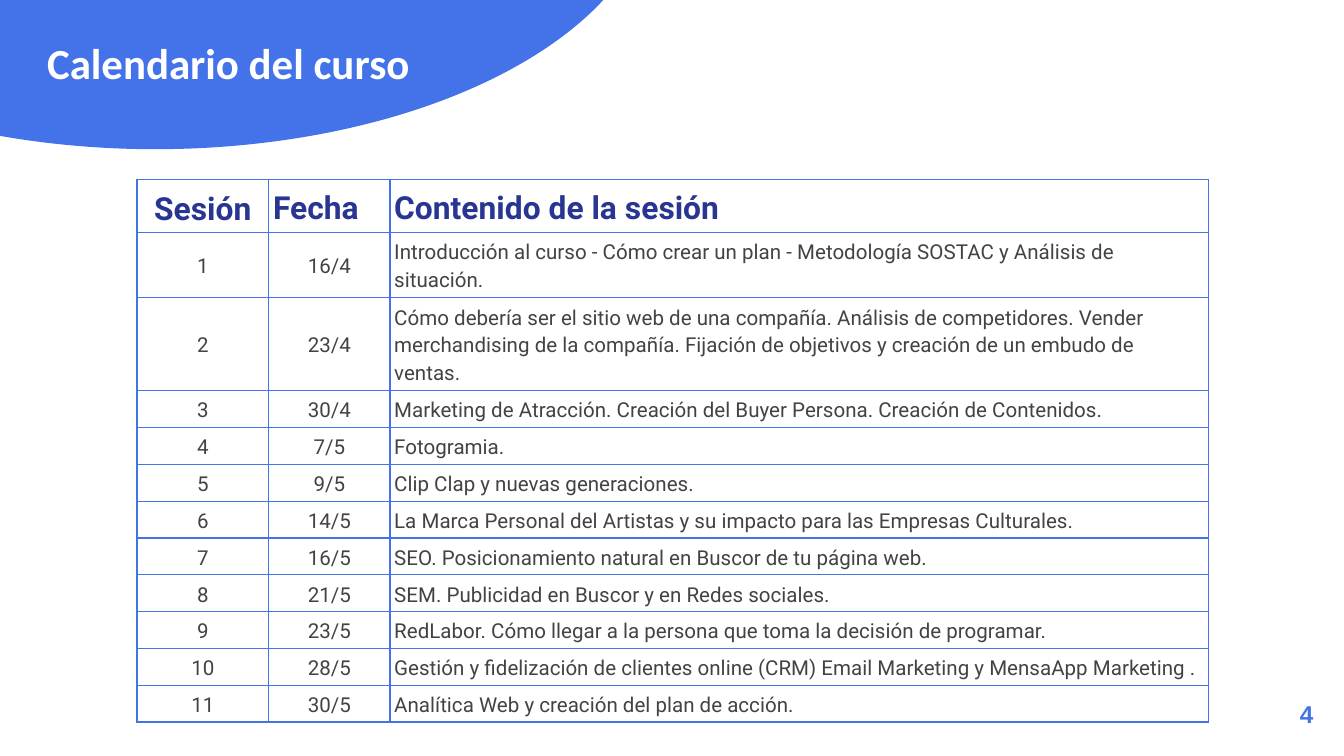
import dataclasses

import pptx
import pptx.dml.color
import pptx.enum.shapes
import pptx.enum.text
import pptx.oxml
import pptx.oxml.ns
import pptx.util

Cm = pptx.util.Cm
Pt = pptx.util.Pt
RGB = pptx.dml.color.RGBColor.from_string
ALIGN = pptx.enum.text.PP_ALIGN
ANCHOR = pptx.enum.text.MSO_ANCHOR


@dataclasses.dataclass(frozen=True)
class Theme:
    blue: str = "4473E9"
    navy: str = "283592"
    grey: str = "434343"
    white: str = "FFFFFF"
    title_size: int = 23
    header_size: int = 17
    body_size: int = 11
    number_size: int = 13
    border_width: float = 0.75


theme = Theme()


def write_text(holder, text, *, font, size, color, bold=False, align=ALIGN.LEFT,
               anchor=ANCHOR.MIDDLE, margin=0.25, spacing=None):
    holder.text = text
    holder.vertical_anchor = anchor
    holder.margin_left = holder.margin_right = Cm(margin)
    holder.margin_top = holder.margin_bottom = Cm(margin)
    paragraph = getattr(holder, "text_frame", holder).paragraphs[0]
    paragraph.alignment = align
    paragraph.line_spacing = spacing
    run_font = paragraph.runs[0].font
    run_font.name = font
    run_font.size = Pt(size)
    run_font.bold = bold
    run_font.color.rgb = RGB(color)


def add_borders(cell, color, width):
    properties = cell._tc.get_or_add_tcPr()
    for side in ("lnL", "lnR", "lnT", "lnB"):
        properties.append(pptx.oxml.parse_xml(
            f'<a:{side} {pptx.oxml.ns.nsdecls("a")} w="{Pt(width)}">'
            f'<a:solidFill><a:srgbClr val="{color}"/></a:solidFill></a:{side}>'
        ))


presentation = pptx.Presentation()
presentation.slide_width = Cm(25.4)
presentation.slide_height = Cm(14.29)
slide = presentation.slides.add_slide(presentation.slide_layouts.get_by_name("Title Only"))

title = slide.shapes.title
title.left, title.top, title.width, title.height = Cm(0.64), Cm(0.33), Cm(8.76), Cm(1.7)
title.text_frame.auto_size = pptx.enum.text.MSO_AUTO_SIZE.NONE
write_text(title.text_frame, "Calendario del curso", font="Calibri",
           size=theme.title_size, color=theme.white, bold=True)

title_backdrop = slide.shapes.add_shape(
    pptx.enum.shapes.MSO_SHAPE.OVAL, Cm(-6.55), Cm(-7.44), Cm(18.97), Cm(10.26))
title_backdrop.shadow.inherit = False
title_backdrop.fill.solid()
title_backdrop.fill.fore_color.rgb = RGB(theme.blue)
title_backdrop.line.fill.background()
title.element.addprevious(title_backdrop.element)

page_number = slide.shapes.add_textbox(Cm(23.55), Cm(12.95), Cm(1.52), Cm(1.09))
page_number.text_frame.word_wrap = True
write_text(page_number.text_frame, "4", font="Arial", size=theme.number_size,
           color=theme.blue, bold=True, align=ALIGN.RIGHT)

headings = ("Sesión", "Fecha", "Contenido de la sesión")
sessions = [
    ("16/4", "Introducción al curso - Cómo crear un plan - Metodología SOSTAC y Análisis de situación."),
    ("23/4", "Cómo debería ser el sitio web de una compañía. Análisis de competidores. Vender "
             "merchandising de la compañía. Fijación de objetivos y creación de un embudo de ventas."),
    ("30/4", "Marketing de Atracción. Creación del Buyer Persona. Creación de Contenidos."),
    ("7/5", "Fotogramia."),
    ("9/5", "Clip Clap y nuevas generaciones."),
    ("14/5", "La Marca Personal del Artistas y su impacto para las Empresas Culturales."),
    ("16/5", "SEO. Posicionamiento natural en Buscor de tu página web."),
    ("21/5", "SEM. Publicidad en Buscor y en Redes sociales."),
    ("23/5", "RedLabor. Cómo llegar a la persona que toma la decisión de programar."),
    ("28/5", "Gestión y fidelización de clientes online (CRM) Email Marketing y MensaApp Marketing ."),
    ("30/5", "Analítica Web y creación del plan de acción."),
]
calendar_rows = [headings] + [
    (str(number), date, content) for number, (date, content) in enumerate(sessions, 1)]

column_widths = (2.49, 2.29, 15.47)
row_height = 0.64
calendar = slide.shapes.add_table(
    len(calendar_rows), len(headings), Cm(2.59), Cm(3.4),
    Cm(sum(column_widths)), Cm(row_height * len(calendar_rows))).table
calendar.first_row = calendar.horz_banding = False
for column, width in zip(calendar.columns, column_widths):
    column.width = Cm(width)

for row_index, row in enumerate(calendar_rows):
    calendar.rows[row_index].height = Cm(row_height)
    is_header = row_index == 0
    for column_index, text in enumerate(row):
        cell = calendar.cell(row_index, column_index)
        centered = column_index == 0 or (column_index == 1 and not is_header)
        write_text(
            cell, text, font="Roboto", bold=is_header, margin=0.08, spacing=1.15,
            size=theme.header_size if is_header else theme.body_size,
            color=theme.navy if is_header else theme.grey,
            align=ALIGN.CENTER if centered else ALIGN.LEFT,
            anchor=ANCHOR.BOTTOM if is_header and column_index == 0 else ANCHOR.MIDDLE)
        add_borders(cell, theme.blue, theme.border_width)
        cell.fill.background()

presentation.save("out.pptx")
